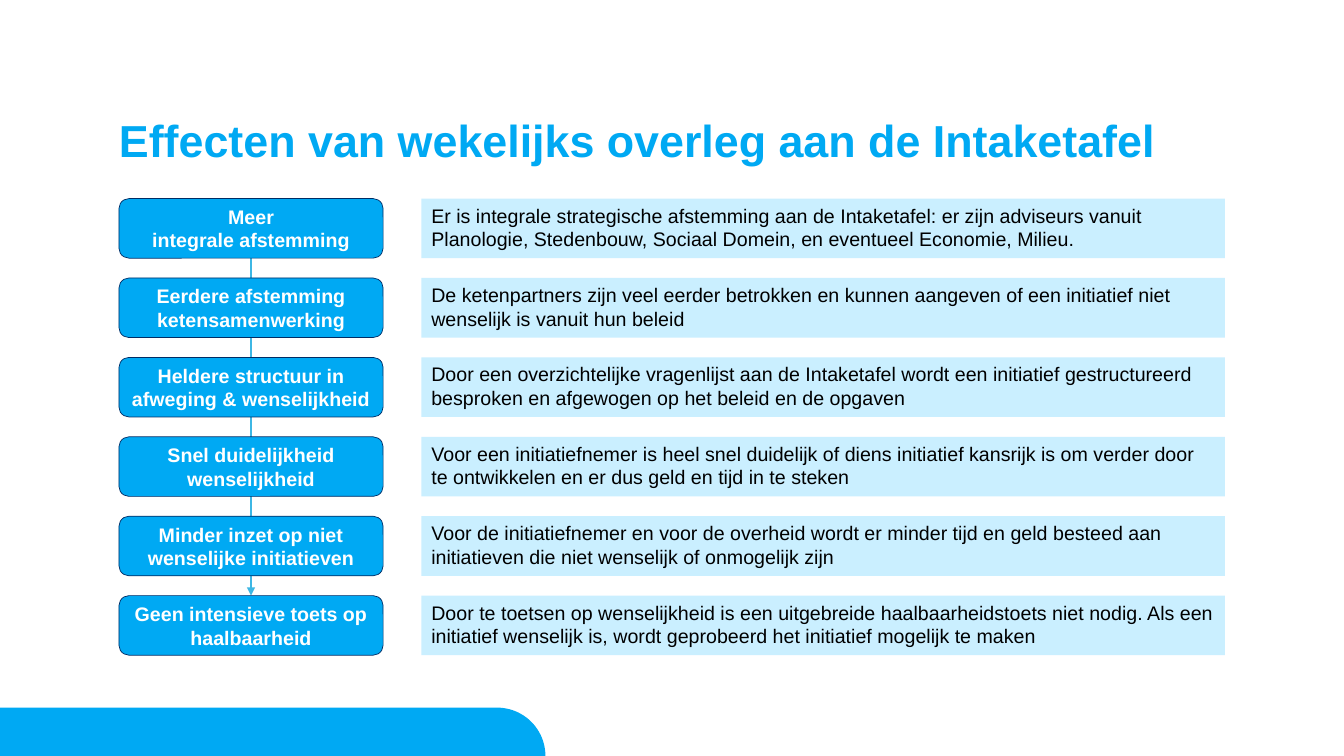
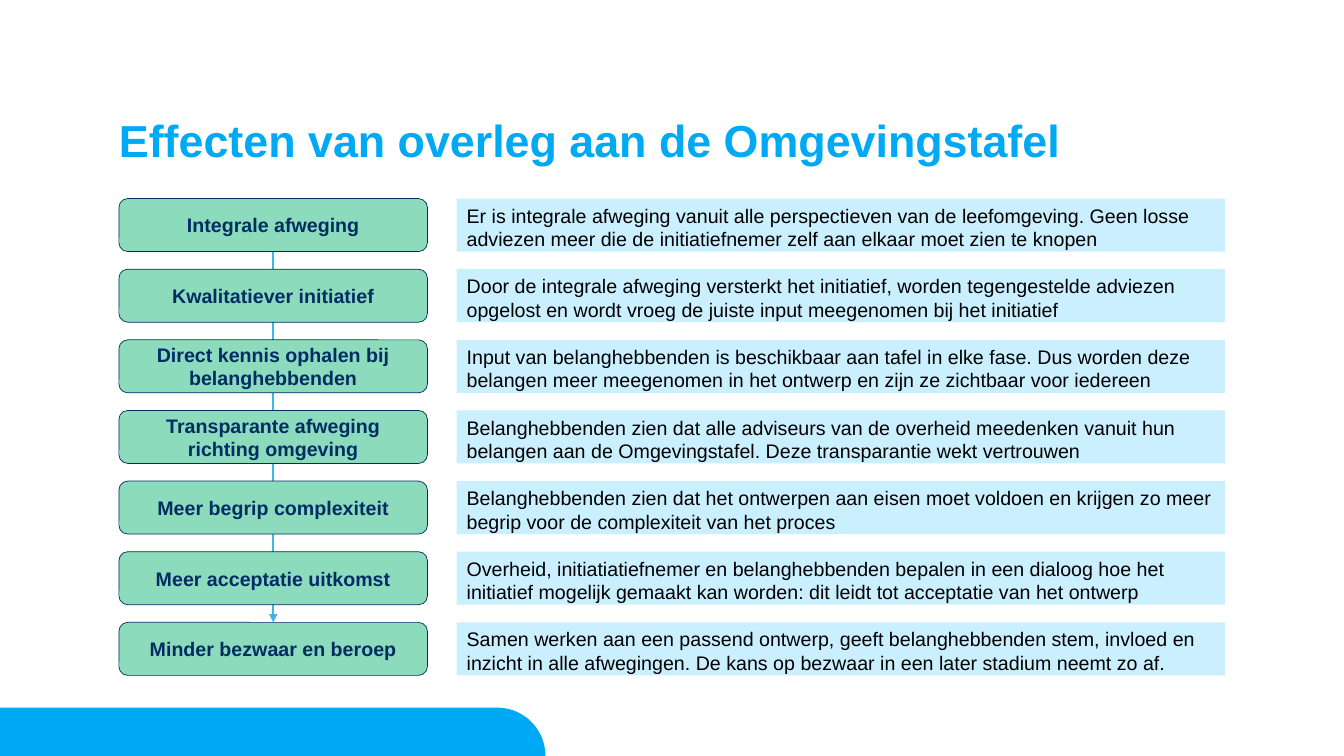
from math import cos, pi, sin

from lxml.etree import SubElement
from pptx import Presentation
from pptx.dml.color import RGBColor
from pptx.enum.shapes import MSO_CONNECTOR, MSO_SHAPE
from pptx.enum.text import MSO_ANCHOR, PP_ALIGN
from pptx.oxml.ns import qn
from pptx.util import Inches, Pt

BLUE = RGBColor(0x00, 0xA9, 0xF3)
PALE_BLUE = RGBColor(0xCA, 0xEF, 0xFF)
ARROW_BLUE = RGBColor(0x3D, 0xB7, 0xE4)
NAVY = RGBColor(0x00, 0x2C, 0x64)
GREEN = RGBColor(0x8C, 0xDB, 0xBC)
WHITE = RGBColor(0xFF, 0xFF, 0xFF)
BLACK = RGBColor(0x00, 0x00, 0x00)
FONT = "Arial"

# Lengths in inches
WIDTH, HEIGHT = 13.33, 7.5
LEFT, RIGHT = 1.18, 12.15
TITLE_TOP, ROWS_TOP = 1.18, 1.97
BAND_TOP, BAND_RIGHT = 7.02, 5.41
BOX_SHARE = 0.75  # part of each row taken by its boxes; the rest is gap

SLIDES = [
    {
        "title": "Effecten van wekelijks overleg aan de Intaketafel",
        "fill": BLUE, "color": WHITE,
        "label_width": 2.62, "text_left": 4.18, "bottom": 6.5,
        "rows": [
            ("Meer\nintegrale afstemming",
             "Er is integrale strategische afstemming aan de Intaketafel: er zijn adviseurs vanuit "
             "Planologie, Stedenbouw, Sociaal Domein, en eventueel Economie, Milieu."),
            ("Eerdere afstemming ketensamenwerking",
             "De ketenpartners zijn veel eerder betrokken en kunnen aangeven of een initiatief niet "
             "wenselijk is vanuit hun beleid"),
            ("Heldere structuur in afweging & wenselijkheid",
             "Door een overzichtelijke vragenlijst aan de Intaketafel wordt een initiatief "
             "gestructureerd besproken en afgewogen op het beleid en de opgaven"),
            ("Snel duidelijkheid wenselijkheid",
             "Voor een initiatiefnemer is heel snel duidelijk of diens initiatief kansrijk is om "
             "verder door te ontwikkelen en er dus geld en tijd in te steken"),
            ("Minder inzet op niet wenselijke initiatieven",
             "Voor de initiatiefnemer en voor de overheid wordt er minder tijd en geld besteed aan "
             "initiatieven die niet wenselijk of onmogelijk zijn"),
            ("Geen intensieve toets op haalbaarheid",
             "Door te toetsen op wenselijkheid is een uitgebreide haalbaarheidstoets niet nodig. "
             "Als een initiatief wenselijk is, wordt geprobeerd het initiatief mogelijk te maken"),
        ],
    },
    {
        "title": "Effecten van overleg aan de Omgevingstafel",
        "fill": GREEN, "color": NAVY,
        "label_width": 3.06, "text_left": 4.53, "bottom": 6.7,
        "rows": [
            ("Integrale afweging",
             "Er is integrale afweging vanuit alle perspectieven van de leefomgeving. Geen losse "
             "adviezen meer die de initiatiefnemer zelf aan elkaar moet zien te knopen"),
            ("Kwalitatiever initiatief",
             "Door de integrale afweging versterkt het initiatief, worden tegengestelde adviezen "
             "opgelost en wordt vroeg de juiste input meegenomen bij het initiatief"),
            ("Direct kennis ophalen bij belanghebbenden",
             "Input van belanghebbenden is beschikbaar aan tafel in elke fase. Dus worden deze "
             "belangen meer meegenomen in het ontwerp en zijn ze zichtbaar voor iedereen"),
            ("Transparante afweging richting omgeving",
             "Belanghebbenden zien dat alle adviseurs van de overheid meedenken vanuit hun "
             "belangen aan de Omgevingstafel. Deze transparantie wekt vertrouwen"),
            ("Meer begrip complexiteit",
             "Belanghebbenden zien dat het ontwerpen aan eisen moet voldoen en krijgen zo meer "
             "begrip voor de complexiteit van het proces"),
            ("Meer acceptatie uitkomst",
             "Overheid, initiatiatiefnemer en belanghebbenden bepalen in een dialoog hoe het "
             "initiatief mogelijk gemaakt kan worden: dit leidt tot acceptatie van het ontwerp"),
            ("Minder bezwaar en beroep",
             "Samen werken aan een passend ontwerp, geeft belanghebbenden stem, invloed en "
             "inzicht in alle afwegingen. De kans op bezwaar in een later stadium neemt zo af."),
        ],
    },
]


def write(shape, text, size, color, bold=False, align=PP_ALIGN.LEFT, anchor=MSO_ANCHOR.TOP):
    frame = shape.text_frame
    frame.word_wrap = True
    frame.vertical_anchor = anchor
    frame.text = text
    for para in frame.paragraphs:
        para.alignment = align
        font = para.font
        font.name, font.size, font.bold = FONT, Pt(size), bold
        font.color.rgb = color
    return frame


def add_box(page, kind, left, top, width, height, fill, outline=None):
    box = page.shapes.add_shape(kind, *map(Inches, (left, top, width, height)))
    box.shadow.inherit = False
    box.fill.solid()
    box.fill.fore_color.rgb = fill
    if outline is None:
        box.line.fill.background()
    else:
        box.line.color.rgb = outline
        box.line.width = Pt(0.5)
    return box


def add_band(page):
    """Draw the footer band, whose right end is a quarter circle."""
    radius = HEIGHT - BAND_TOP
    center = BAND_RIGHT - radius
    steps = 24
    angles = [pi / 2 * (1 - step / steps) for step in range(steps + 1)]
    arc = [(center + radius * cos(a), HEIGHT - radius * sin(a)) for a in angles]
    points = [(Inches(x), Inches(y)) for x, y in [(0, BAND_TOP), *arc]]
    builder = page.shapes.build_freeform(0, Inches(HEIGHT))
    builder.add_line_segments(points, close=True)
    band = builder.convert_to_shape()
    band.shadow.inherit = False
    band.fill.solid()
    band.fill.fore_color.rgb = BLUE
    band.line.fill.background()


def add_title(page, text):
    box = page.shapes.add_textbox(
        *map(Inches, (LEFT, TITLE_TOP, RIGHT - LEFT, ROWS_TOP - TITLE_TOP)))
    frame = write(box, text, 32, BLUE, bold=True)
    frame.margin_left = frame.margin_top = frame.margin_right = frame.margin_bottom = 0
    frame.paragraphs[0].line_spacing = 0.9


def add_arrow(page, x, top, bottom):
    arrow = page.shapes.add_connector(
        MSO_CONNECTOR.STRAIGHT, *map(Inches, (x, top, x, bottom)))
    arrow.line.color.rgb = ARROW_BLUE
    arrow.line.width = Pt(1.5)
    SubElement(arrow.line._get_or_add_ln(), qn("a:tailEnd"), type="triangle")
    SubElement(arrow._element.spPr, qn("a:effectLst"))


def add_rows(page, content):
    rows, label_width, text_left = (content[key] for key in ("rows", "label_width", "text_left"))
    pitch = (content["bottom"] - ROWS_TOP) / (len(rows) - 1 + BOX_SHARE)
    height = pitch * BOX_SHARE
    last_top = ROWS_TOP + pitch * (len(rows) - 1)
    add_arrow(page, LEFT + label_width / 2, ROWS_TOP + height / 2, last_top)
    for index, (label, text) in enumerate(rows):
        top = ROWS_TOP + pitch * index
        label_box = add_box(page, MSO_SHAPE.ROUNDED_RECTANGLE, LEFT, top,
                            label_width, height, content["fill"], NAVY)
        write(label_box, label, 14, content["color"], True, PP_ALIGN.CENTER, MSO_ANCHOR.MIDDLE)
        text_box = add_box(page, MSO_SHAPE.RECTANGLE, text_left, top,
                           RIGHT - text_left, height, PALE_BLUE)
        write(text_box, text, 14, BLACK)


def main():
    deck = Presentation()
    deck.slide_width, deck.slide_height = Inches(WIDTH), Inches(HEIGHT)
    for content in SLIDES:
        page = deck.slides.add_slide(deck.slide_layouts[6])
        add_band(page)
        add_title(page, content["title"])
        add_rows(page, content)
    deck.save("out.pptx")


if __name__ == "__main__":
    main()
